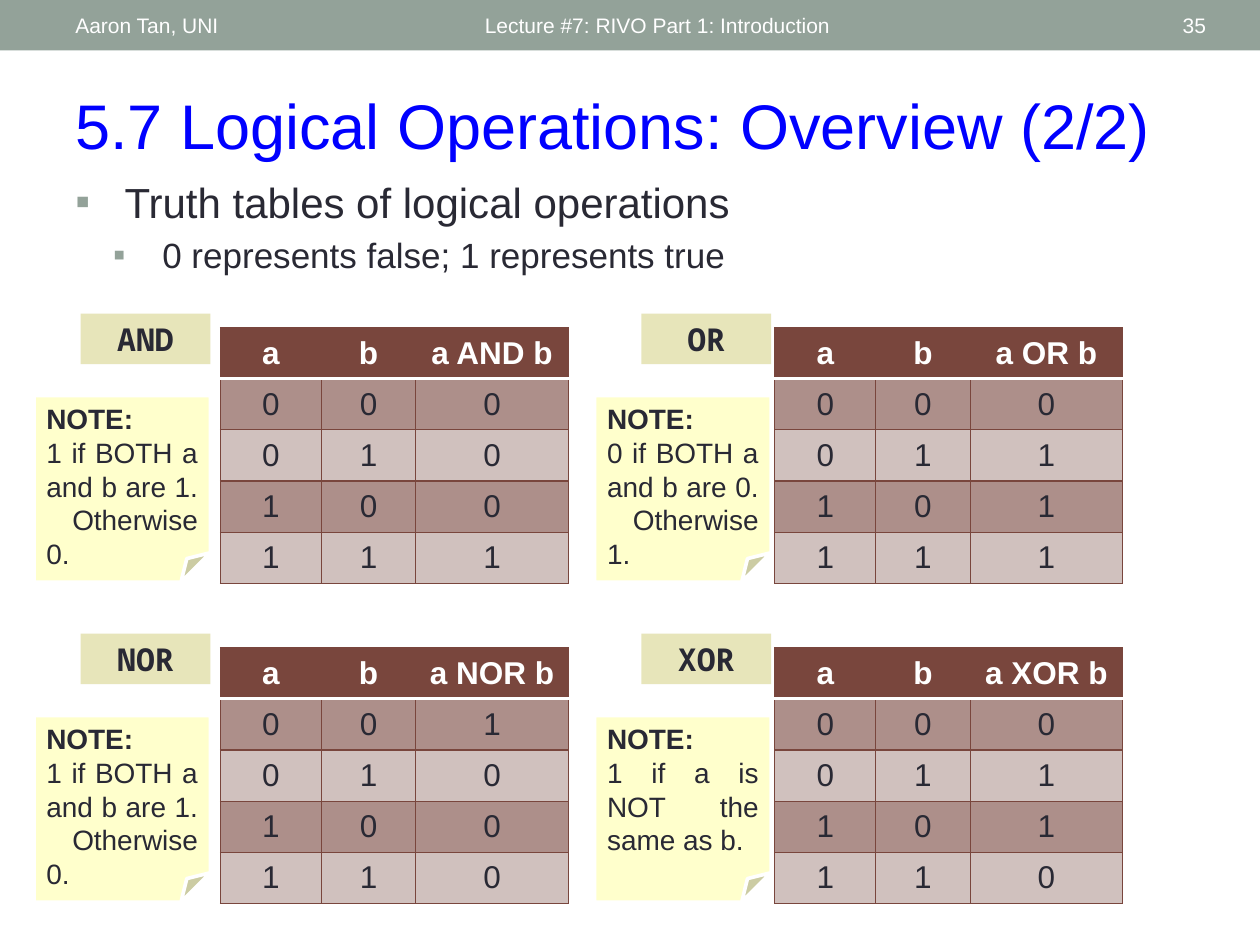
from lxml import etree
from pptx import Presentation
from pptx.dml.color import RGBColor
from pptx.enum.shapes import MSO_SHAPE
from pptx.enum.text import MSO_ANCHOR, PP_ALIGN
from pptx.oxml.ns import qn
from pptx.util import Inches, Pt

SAGE = RGBColor(0x93, 0xA2, 0x99)
WHITE = RGBColor(0xFF, 0xFF, 0xFF)
BLUE = RGBColor(0x00, 0x00, 0xFF)
INK = RGBColor(0x29, 0x29, 0x34)
BROWN = RGBColor(0x79, 0x46, 0x3D)
DARK_BAND = RGBColor(0xAD, 0x8F, 0x8A)
LIGHT_BAND = RGBColor(0xD0, 0xC1, 0xBE)
KHAKI = RGBColor(0xE7, 0xE5, 0xBA)
NOTE_YELLOW = RGBColor(0xFF, 0xFF, 0xCC)

RECTANGLE, FOLDED_CORNER = MSO_SHAPE.RECTANGLE, MSO_SHAPE.FOLDED_CORNER
TOP, MIDDLE = MSO_ANCHOR.TOP, MSO_ANCHOR.MIDDLE
LEFT, CENTER, RIGHT, JUSTIFY = PP_ALIGN.LEFT, PP_ALIGN.CENTER, PP_ALIGN.RIGHT, PP_ALIGN.JUSTIFY

BODY_FONT, CODE_FONT = "Arial", "Noto Sans Mono"
INPUTS = [("0", "0"), ("0", "1"), ("1", "0"), ("1", "1")]
COLUMN_WIDTHS = [0.8, 0.75, 1.21]
TABLE_HEIGHT = 2.03
PANEL_LEFTS, TABLE_LEFTS = [0.27, 4.72], [1.75, 6.15]
PANEL_TOP, PANEL_PITCH = 2.49, 2.54
OPERATIONS = [
    ("AND", "0001", "1 if BOTH a and b are 1.  Otherwise 0."),
    ("OR", "0111", "0 if BOTH a and b are 0.  Otherwise 1."),
    ("NOR", "1000", "1 if BOTH a and b are 1.  Otherwise 0."),
    ("XOR", "0110", "1 if a is NOT the same as b."),
]


def style(paragraph, size, color, align=LEFT, bold=False, font=BODY_FONT):
    """Format a paragraph and its runs."""
    paragraph.alignment = align
    for run in paragraph.runs:
        run.font.size = Pt(size)
        run.font.name = font
        run.font.bold = bold
        run.font.color.rgb = color


def add_text(slide, box, lines, anchor=TOP):
    """Add a wrapping text box with one paragraph per line."""
    frame = slide.shapes.add_textbox(*map(Inches, box)).text_frame
    frame.word_wrap = True
    frame.vertical_anchor = anchor
    frame.text = "\n".join(lines)
    return frame.paragraphs


def add_block(slide, kind, box, fill, line=None):
    """Add a flat preset shape with an optional outline."""
    block = slide.shapes.add_shape(kind, *map(Inches, box))
    block.shadow.inherit = False
    block.fill.solid()
    block.fill.fore_color.rgb = fill
    if line is None:
        block.line.fill.background()
    else:
        block.line.color.rgb = line
        block.line.width = Pt(2.08)
    block.text_frame.word_wrap = True
    block.text_frame.vertical_anchor = TOP
    return block


def add_header(slide, box):
    """Place the top band with author, lecture and slide number."""
    left, top, _, height = box
    add_block(slide, RECTANGLE, box, SAGE)
    for offset, width, text, align in [
        (0.5, 3.17, "Aaron Tan, UNI", LEFT),
        (3.75, 4.5, "Lecture #7: RIVO Part 1: Introduction", LEFT),
        (8.72, 0.95, "35", RIGHT),
    ]:
        text_box = (left + offset, top + 0.02, width, height - 0.04)
        style(add_text(slide, text_box, [text], MIDDLE)[0], 12, WHITE, align)


def add_bullet(paragraph, indent):
    """Give a paragraph a square bullet with a hanging indent."""
    properties = paragraph._p.get_or_add_pPr()
    properties.set("marL", str(Inches(indent)))
    properties.set("indent", str(Inches(-0.39)))
    before = etree.SubElement(properties, qn("a:spcBef"))
    etree.SubElement(before, qn("a:spcPct"), val="20000")
    color = etree.SubElement(properties, qn("a:buClr"))
    etree.SubElement(color, qn("a:srgbClr"), val=str(SAGE))
    etree.SubElement(properties, qn("a:buFont"), typeface=BODY_FONT)
    etree.SubElement(properties, qn("a:buChar"), char="▪")


def add_intro(slide, box):
    """Place the title and the two bullet levels below it."""
    left, top, width, height = box
    title = add_text(slide, (left, top, width, 0.71), ["5.7 Logical Operations: Overview (2/2)"])
    style(title[0], 36, BLUE)
    bullets = add_text(slide, (left, top + 0.71, 9, height - 0.71), [
        "Truth tables of logical operations",
        "0 represents false; 1 represents true",
    ])
    for level, (bullet, size, indent) in enumerate(zip(bullets, [24, 20], [0.39, 0.69])):
        bullet.level = level
        style(bullet, size, INK)
        add_bullet(bullet, indent)


def set_border(cell, side, color, width):
    """Draw one border of a cell."""
    border = etree.SubElement(cell._tc.get_or_add_tcPr(), qn(f"a:ln{side}"), w=str(Pt(width)))
    fill = etree.SubElement(border, qn("a:solidFill"))
    etree.SubElement(fill, qn("a:srgbClr"), val=str(color))


def fill_cell(cell, text, row):
    """Write and format one truth table cell."""
    header = row == 0
    cell.text = text
    cell.vertical_anchor = MIDDLE
    style(cell.text_frame.paragraphs[0], 18, WHITE if header else INK, CENTER, header)
    for side in "LRTB":
        divider = (header and side == "B") or (row == 1 and side == "T")
        set_border(cell, side, WHITE if divider else BROWN, 2.08 if divider else 0.75)
    cell.fill.solid()
    cell.fill.fore_color.rgb = BROWN if header else DARK_BAND if row % 2 else LIGHT_BAND


def add_truth_table(slide, box, name, outputs):
    """Place the truth table of one operation."""
    rows = [("a", "b", f"a {name} b")] + [(a, b, out) for (a, b), out in zip(INPUTS, outputs)]
    table = slide.shapes.add_table(len(rows), len(COLUMN_WIDTHS), *map(Inches, box)).table
    table.horz_banding = False
    table.first_row = False
    for column, width in zip(table.columns, COLUMN_WIDTHS):
        column.width = Inches(width)
    for r, values in enumerate(rows):
        for c, value in enumerate(values):
            fill_cell(table.cell(r, c), value, r)


def add_side_notes(slide, box, name, rule):
    """Place the operation label and the folded note under it."""
    left, top, width, height = box
    label = add_block(slide, RECTANGLE, (left + 0.37, top, width - 0.37, 0.4), KHAKI)
    label.text_frame.text = name
    style(label.text_frame.paragraphs[0], 18, INK, CENTER, True, CODE_FONT)
    note_box = (left, top + 0.65, width, height - 0.65)
    note = add_block(slide, FOLDED_CORNER, note_box, NOTE_YELLOW, WHITE)
    note.text_frame.text = f"NOTE:\n{rule}"
    heading, body = note.text_frame.paragraphs
    style(heading, 16, INK, bold=True)
    style(body, 16, INK, JUSTIFY)


def main():
    """Build the slide and save it."""
    deck = Presentation()
    deck.slide_width, deck.slide_height = Inches(10), Inches(7.5)
    slide = deck.slides.add_slide(deck.slide_layouts[6])
    add_header(slide, (0, 0, 10, 0.4))
    add_intro(slide, (0.5, 0.64, 9.17, 1.8))
    for index, (name, outputs, rule) in enumerate(OPERATIONS):
        row, column = divmod(index, 2)
        top = PANEL_TOP + row * PANEL_PITCH
        table_box = (TABLE_LEFTS[column], top + 0.11, sum(COLUMN_WIDTHS), TABLE_HEIGHT)
        add_truth_table(slide, table_box, name, outputs)
        add_side_notes(slide, (PANEL_LEFTS[column], top, 1.4, 2.13), name, rule)
    deck.save("out.pptx")


if __name__ == "__main__":
    main()
